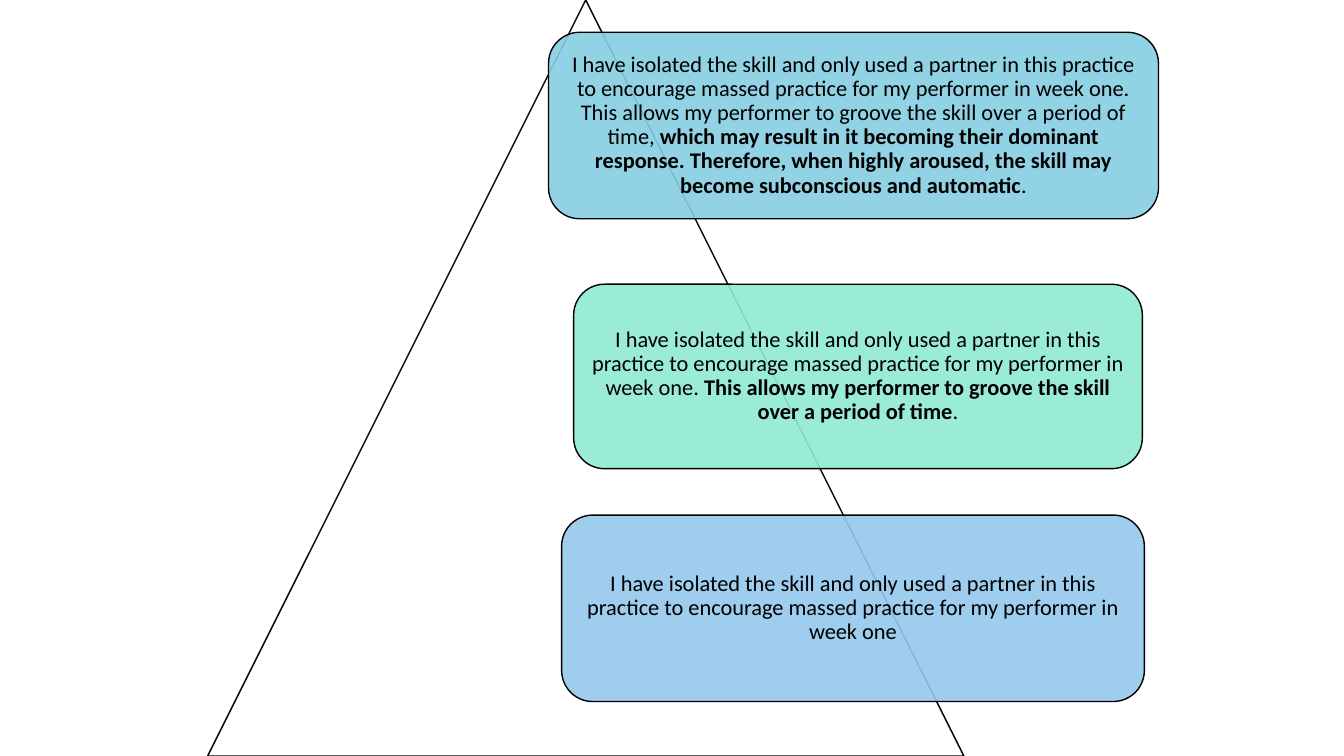
from lxml.etree import SubElement
from pptx import Presentation
from pptx.dml.color import RGBColor
from pptx.enum.shapes import MSO_SHAPE as Shape
from pptx.enum.text import MSO_ANCHOR as Anchor, PP_ALIGN as Align
from pptx.oxml.ns import qn
from pptx.util import Emu, Pt

PX = 9144  # 100 px to the inch
BLACK, WHITE = "000000", "FFFFFF"
INSET = 7  # on top of the room the rounded corners take

ISOLATED = ("I have isolated the skill and only used a partner in this practice "
            "to encourage massed practice for my performer in week one")
GROOVE = "This allows my performer to groove the skill over a period of time"
DOMINANT = ("which may result in it becoming their dominant response. Therefore, "
            "when highly aroused, the skill may become subconscious and automatic")

# Left, top, width, height, fill, (text, bold) spans; from the base up
STEPS = [
    (557, 511, 578, 185, "94C8ED", [(ISOLATED, False)]),
    (569, 282, 564, 183, "91EAD2",
     [(ISOLATED + ". ", False), (GROOVE, True), (".", False)]),
    (544, 32, 605, 185, "86CFE2",
     [(f"{ISOLATED}. {GROOVE}, ", False), (DOMINANT, True), (".", False)]),
]


def px(length):
    return Emu(length * PX)


def color(code):
    return RGBColor.from_string(code)


def add_outlined(page, kind, left, top, width, height, fill):
    shape = page.shapes.add_shape(kind, px(left), px(top), px(width), px(height))
    shape.shadow.inherit = False
    shape.fill.solid()
    shape.fill.fore_color.rgb = color(fill)
    shape.line.color.rgb = color(BLACK)
    shape.line.width = Pt(1)
    return shape


def set_opacity(shape, percent):
    fill_color = shape.fill._xPr.find(qn("a:solidFill"))[0]
    SubElement(fill_color, qn("a:alpha"), val=str(percent * 1000))


def write_spans(shape, spans):
    frame = shape.text_frame
    frame.word_wrap = True
    frame.vertical_anchor = Anchor.MIDDLE
    frame.margin_left = frame.margin_right = px(INSET)
    frame.margin_top = frame.margin_bottom = px(INSET)
    para = frame.paragraphs[0]
    para.alignment = Align.CENTER
    para.line_spacing = 0.9
    para.font.name = "Calibri"
    para.font.size = Pt(16)
    para.font.color.rgb = color(BLACK)
    for text, bold in spans:
        span = para.add_run()
        span.text = text
        span.font.bold = bold


def add_step(page, left, top, width, height, fill, spans):
    box = add_outlined(page, Shape.ROUNDED_RECTANGLE, left, top, width, height, fill)
    set_opacity(box, 90)
    write_spans(box, spans)


def main():
    deck = Presentation()
    deck.slide_width, deck.slide_height = px(1333), px(750)
    page = deck.slides.add_slide(deck.slide_layouts[6])

    # Pyramid behind the steps
    add_outlined(page, Shape.ISOSCELES_TRIANGLE, 206, 0, 750, 750, WHITE)

    # Steps of the answer
    for step in STEPS:
        add_step(page, *step)

    deck.save("out.pptx")


if __name__ == "__main__":
    main()
